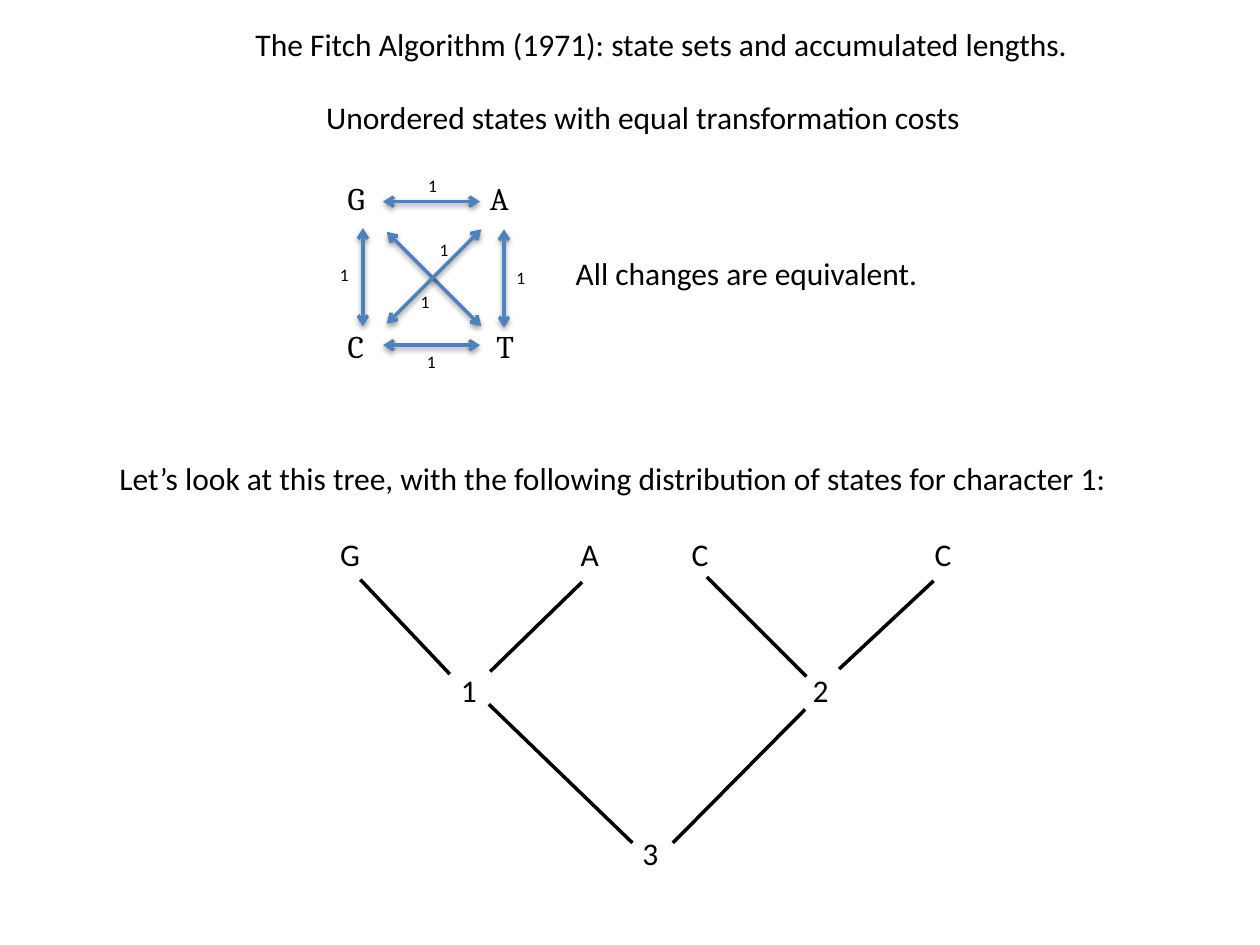
"""Build a slide that introduces the Fitch algorithm with a cost square and a tree."""
from dataclasses import dataclass

from lxml.etree import SubElement
from pptx import Presentation
from pptx.dml.color import RGBColor
from pptx.enum.shapes import MSO_CONNECTOR as Connector
from pptx.enum.text import MSO_ANCHOR as Anchor, MSO_AUTO_SIZE as AutoSize, PP_ALIGN as Align
from pptx.oxml.ns import qn
from pptx.util import Inches, Pt


@dataclass(frozen=True)
class Theme:
    ink: RGBColor = RGBColor(0, 0, 0)
    arrow: RGBColor = RGBColor(0x4F, 0x81, 0xBD)
    sans: str = "Calibri"
    serif: str = "Cambria"
    text_size: Pt = Pt(18)
    cost_size: Pt = Pt(10)
    line_width: Pt = Pt(2)


THEME = Theme()

STATEMENTS = [
    ("Unordered states with equal transformation costs", 2.49, 0.73, 5.44),
    ("All changes are equivalent.", 4.47, 1.97, 2.95),
    ("Let’s look at this tree, with the following distribution of states for character 1:",
     0.85, 3.59, 8.06),
]
BASES = [("G", 2.66, 1.37), ("A", 3.79, 1.37), ("C", 2.66, 2.55), ("T", 3.84, 2.55)]
CHANGES = [
    ((3.04, 1.6), (3.81, 1.6)),
    ((3.04, 2.74), (3.81, 2.74)),
    ((2.88, 2.59), (2.88, 1.81)),
    ((4, 2.6), (4, 1.82)),
    ((3.07, 1.84), (3.82, 2.59)),
    ((3.82, 1.82), (3.07, 2.57)),
]
COSTS = [(3.3, 1.34), (3.29, 2.74), (2.6, 2.05), (4, 2.07), (3.39, 1.85), (3.24, 2.26)]
TREE_LABELS = [
    ("G", 2.6, 4.2), ("A", 4.51, 4.2), ("C", 5.39, 4.2), ("C", 7.32, 4.2),
    ("1", 3.56, 5.28), ("2", 6.35, 5.28), ("3", 5, 6.57),
]
BRANCHES = [
    ((2.86, 4.6), (3.57, 5.35)),
    ((4.62, 4.62), (3.89, 5.33)),
    ((5.61, 4.58), (6.4, 5.37)),
    ((7.41, 4.61), (6.66, 5.31)),
    ((3.88, 5.59), (5.02, 6.69)),
    ((6.39, 5.63), (5.34, 6.69)),
]


def write(box, text, size=THEME.text_size, font=THEME.sans, align=Align.LEFT):
    """Put one unwrapped line of text in a box."""
    frame = box.text_frame
    frame.text = text
    frame.word_wrap = False
    frame.auto_size = AutoSize.SHAPE_TO_FIT_TEXT
    frame.vertical_anchor = Anchor.TOP
    para = frame.paragraphs[0]
    para.alignment = align
    para.font.size = size
    para.font.name = font
    para.font.color.rgb = THEME.ink


def add_title(page, text, left, top, width, height=0.4):
    """Place and fill the title placeholder."""
    title = page.shapes.title
    title.left, title.top = Inches(left), Inches(top)
    title.width, title.height = Inches(width), Inches(height)
    write(title, text, align=Align.CENTER)


def add_label(page, text, left, top, width=0.35, height=0.4, **style):
    """Add a text box holding one line."""
    box = page.shapes.add_textbox(Inches(left), Inches(top), Inches(width), Inches(height))
    write(box, text, **style)


def add_line(page, start, end, color):
    """Add a straight line without a shadow and return it with its effect list."""
    points = [Inches(value) for value in (*start, *end)]
    line = page.shapes.add_connector(Connector.STRAIGHT, *points)
    line.line.color.rgb = color
    line.line.width = THEME.line_width
    effects = SubElement(line._element.spPr, qn("a:effectLst"))
    return line, effects


def add_change(page, start, end):
    """Add a double-headed arrow with a soft shadow below it."""
    arrow, effects = add_line(page, start, end, THEME.arrow)
    outline = arrow.line._get_or_add_ln()
    for tag in ("a:headEnd", "a:tailEnd"):
        SubElement(outline, qn(tag), type="arrow")
    shadow = SubElement(effects, qn("a:outerShdw"), blurRad="40000", dist="20000",
                        dir="5400000", rotWithShape="0")
    color = SubElement(shadow, qn("a:srgbClr"), val="000000")
    SubElement(color, qn("a:alpha"), val="38000")


def add_cost_square(page):
    """Draw the four bases and the equal cost of every change."""
    for base, left, top in BASES:
        add_label(page, base, left, top, font=THEME.serif)
    for start, end in CHANGES:
        add_change(page, start, end)
    for left, top in COSTS:
        add_label(page, "1", left, top, 0.27, 0.27, size=THEME.cost_size)


def add_tree(page):
    """Draw the tree with its leaf states and numbered nodes."""
    for start, end in BRANCHES:
        add_line(page, start, end, THEME.ink)
    for label, left, top in TREE_LABELS:
        add_label(page, label, left, top)


def main():
    """Build and save the deck."""
    deck = Presentation()
    deck.slide_width, deck.slide_height = Inches(10), Inches(7.5)
    page = deck.slides.add_slide(deck.slide_layouts[5])
    add_title(page, "The Fitch Algorithm (1971): state sets and accumulated lengths.",
              1.89, 0.15, 6.72)
    for text, left, top, width in STATEMENTS:
        add_label(page, text, left, top, width)
    add_cost_square(page)
    add_tree(page)
    deck.save("out.pptx")


if __name__ == "__main__":
    main()
